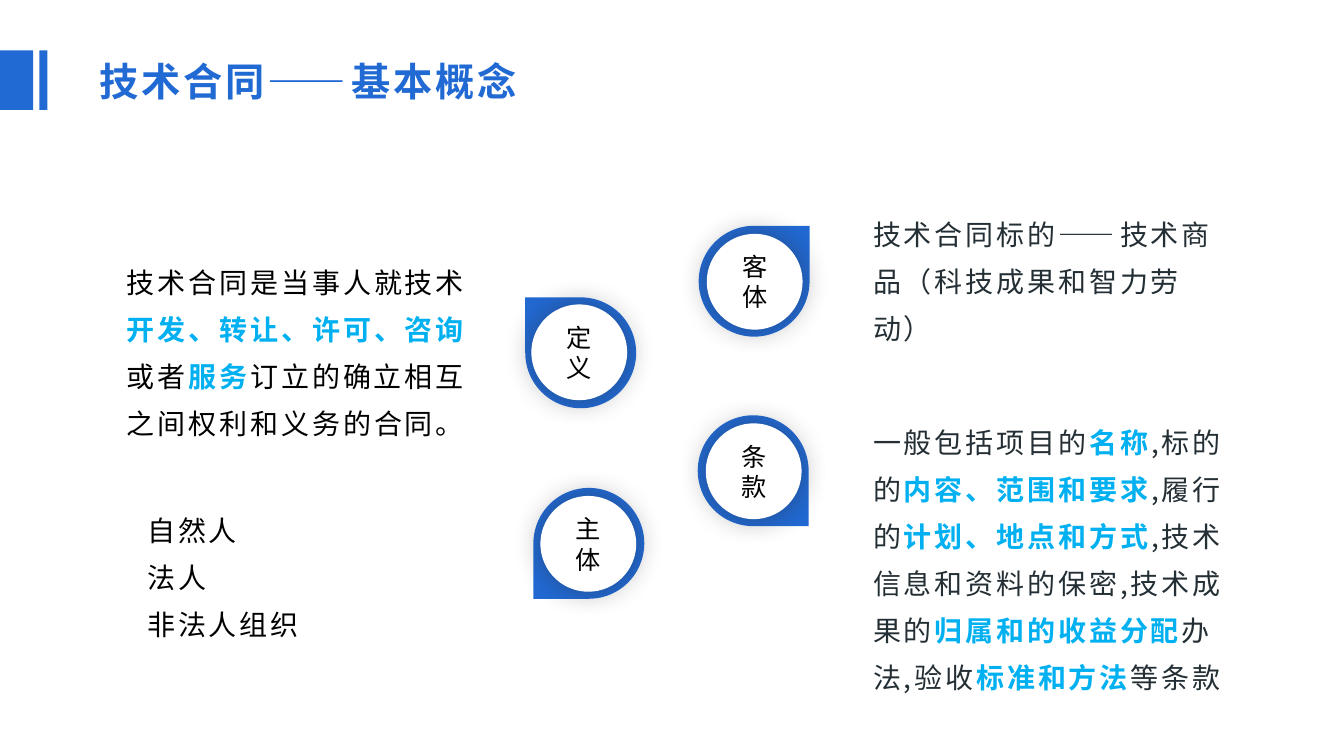
"""Build the slide on the basic concepts of a technology contract."""
from dataclasses import dataclass

from lxml import etree
from pptx import Presentation
from pptx import util as u
from pptx.dml.color import RGBColor
from pptx.enum import shapes, text
from pptx.oxml import ns

PX = 9144


@dataclass(frozen=True)
class Theme:
    """Colours, fonts and type sizes."""
    blue: str = "2169D3"
    accent: str = "00B0F0"
    black: str = "000000"
    slate: str = "242F35"
    white: str = "FFFFFF"
    shadow: str = "262626"
    body_font: str = "Noto Sans CJK JP"
    label_font: str = "Arial"
    title_size: int = 28
    body_size: int = 20
    label_size: int = 18


class SlideBuilder:
    """Hold the theme and the current slide."""

    def __init__(self, theme, slide):
        self.theme = theme
        self.slide = slide

    def style_run(self, run, font, size, color, bold=False, spacing=0):
        """Format one run."""
        run.font.name = font
        run.font.size = u.Pt(size)
        run.font.bold = bold
        run.font.color.rgb = RGBColor.from_string(color)
        if spacing:
            run._r.get_or_add_rPr().set("spc", str(spacing * 100))

    def prepare(self, frame):
        """Give a frame its insets and wrapping."""
        frame.word_wrap = True
        frame.auto_size = text.MSO_AUTO_SIZE.NONE
        frame.vertical_anchor = text.MSO_ANCHOR.TOP
        frame.margin_left, frame.margin_right = 11 * PX, 8 * PX
        frame.margin_top = frame.margin_bottom = 4 * PX

    def place(self, placeholder, left, top, width, height):
        """Move a placeholder."""
        placeholder.left, placeholder.top = left * PX, top * PX
        placeholder.width, placeholder.height = width * PX, height * PX

    def title(self, wording, *box):
        """Fill the title placeholder."""
        heading = self.slide.shapes.title
        self.place(heading, *box)
        self.prepare(heading.text_frame)
        heading.text_frame.text = wording
        paragraph = heading.text_frame.paragraphs[0]
        paragraph.alignment = text.PP_ALIGN.CENTER
        self.style_run(paragraph.runs[0], self.theme.body_font, self.theme.title_size,
                       self.theme.blue, True, 2)

    def bullets(self, items, *box):
        """Fill the body placeholder with an unmarked list."""
        body = self.slide.placeholders[1]
        self.place(body, *box)
        self.prepare(body.text_frame)
        body.text_frame.text = "\n".join(items)
        for paragraph in body.text_frame.paragraphs:
            paragraph.alignment = text.PP_ALIGN.LEFT
            paragraph.line_spacing = 1.4
            paragraph.space_before = u.Pt(0)
            props = paragraph._p.get_or_add_pPr()
            props.set("marL", "0")
            props.set("indent", "0")
            etree.SubElement(props, ns.qn("a:buNone"))
            self.style_run(paragraph.runs[0], self.theme.body_font,
                           self.theme.body_size, self.theme.black, spacing=2)

    def passage(self, wording, color, *box):
        """Add a text box; words between asterisks are highlighted."""
        frame = self.slide.shapes.add_textbox(*(n * PX for n in box)).text_frame
        self.prepare(frame)
        paragraph = frame.paragraphs[0]
        paragraph.line_spacing = 1.4
        for index, part in enumerate(wording.split("*")):
            key = index % 2 == 1
            run = paragraph.add_run()
            run.text = part
            self.style_run(run, self.theme.body_font, self.theme.body_size,
                           self.theme.accent if key else color, key, 2)

    def block(self, kind, color, *box):
        """Add a plain filled shape."""
        solid = self.slide.shapes.add_shape(kind, *(n * PX for n in box))
        solid.shadow.inherit = False
        solid.fill.solid()
        solid.fill.fore_color.rgb = RGBColor.from_string(color)
        solid.line.fill.background()
        return solid

    def glow(self, disc):
        """Give a disc a soft shadow on all sides."""
        effects = disc._element.spPr.find(ns.qn("a:effectLst"))
        outer = etree.SubElement(effects, ns.qn("a:outerShdw"), blurRad=str(u.Pt(20)),
                                 dist="0", dir="0", algn="ctr", rotWithShape="0")
        color = etree.SubElement(outer, ns.qn("a:srgbClr"), val=self.theme.shadow)
        etree.SubElement(color, ns.qn("a:alpha"), val="40000")

    def badge(self, label, drop, disc, rotation):
        """Add a teardrop with a labelled disc on it."""
        pointer = self.block(shapes.MSO_SHAPE.TEAR, self.theme.blue, *drop, 110, 110)
        pointer.rotation = rotation
        face = self.block(shapes.MSO_SHAPE.OVAL, self.theme.white, *disc, 95, 95)
        self.glow(face)
        frame = face.text_frame
        frame.word_wrap = True
        frame.vertical_anchor = text.MSO_ANCHOR.MIDDLE
        frame.text = label
        frame.paragraphs[0].alignment = text.PP_ALIGN.CENTER
        self.style_run(frame.paragraphs[0].runs[0], self.theme.label_font,
                       self.theme.label_size, self.theme.black)


def main():
    """Build and save the slide."""
    theme = Theme()
    deck = Presentation()
    deck.slide_width, deck.slide_height = u.Inches(13.33), u.Inches(7.5)
    builder = SlideBuilder(theme, deck.slides.add_slide(deck.slide_layouts[1]))

    for left, width in ((0, 33), (39, 8)):
        builder.block(shapes.MSO_SHAPE.RECTANGLE, theme.blue, left, 50, width, 59)
    builder.title("技术合同——基本概念", 47, 53, 514, 52)

    for label, drop, disc, rotation in (
        ("定义", (521, 295), (527, 302), 270),
        ("客体", (693, 224), (701, 232), 0),
        ("条款", (692, 412), (700, 420), 90),
        ("主体", (529, 484), (536, 492), 180),
    ):
        builder.badge(label, drop, disc, rotation)

    builder.bullets(("自然人", "法人", "非法人组织"), 135, 492, 394, 96)
    for wording, color, left, top in (
        ("技术合同是当事人就技术*开发、转让、许可、咨询*或者*服务*"
         "订立的确立相互之间权利和义务的合同。", theme.black, 115, 246),
        ("技术合同标的——技术商品（科技成果和智力劳动）", theme.slate, 855, 198),
        ("一般包括项目的*名称*,标的的*内容、范围和要求*,履行的*计划、地点和方式*"
         ",技术信息和资料的保密,技术成果的*归属和的收益分配*办法,验收"
         "*标准和方法*等条款", theme.slate, 855, 405),
    ):
        builder.passage(wording, color, left, top, 377, 96)

    deck.save("out.pptx")


if __name__ == "__main__":
    main()
